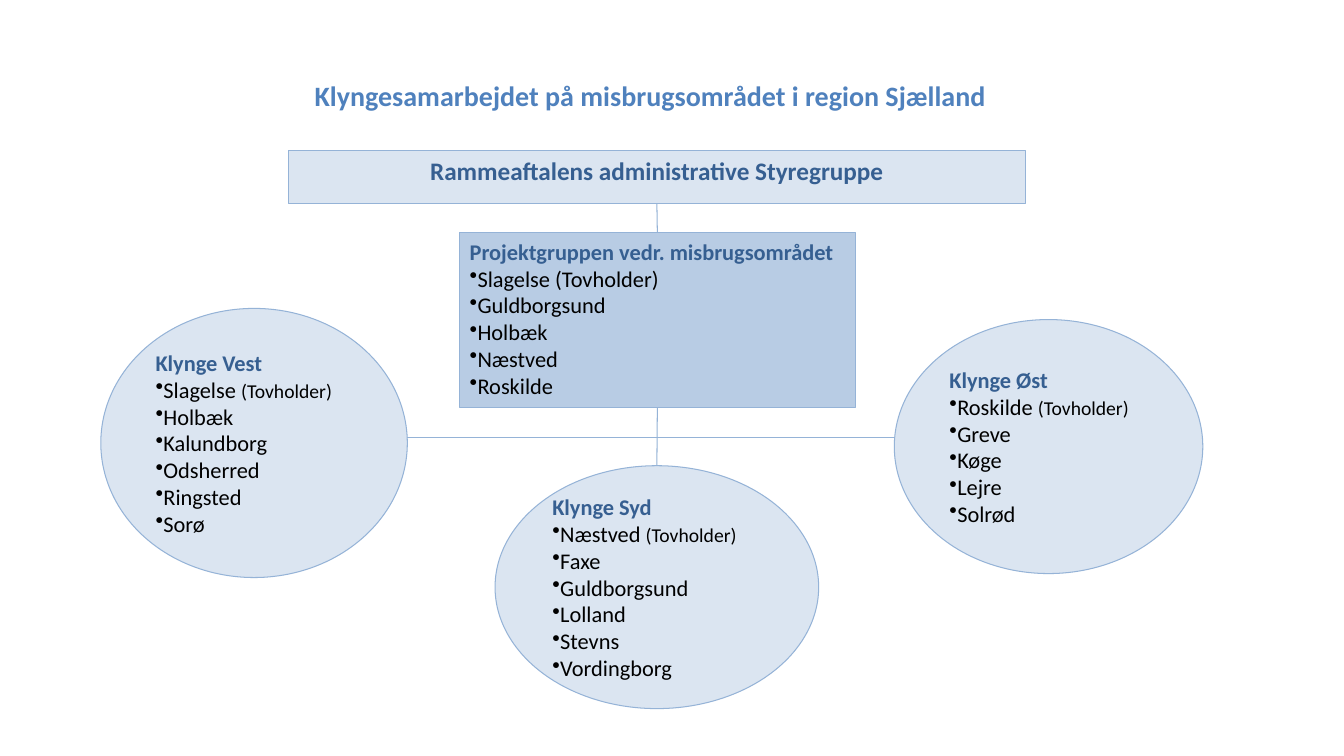
import pptx
import pptx.util
import pptx.dml.color
import pptx.enum.shapes
import pptx.enum.text
import pptx.oxml.ns
from lxml import etree

Inches = pptx.util.Inches
Pt = pptx.util.Pt
RGBColor = pptx.dml.color.RGBColor
SHAPE = pptx.enum.shapes.MSO_SHAPE
ANCHOR = pptx.enum.text.MSO_ANCHOR
ALIGN = pptx.enum.text.PP_ALIGN
qn = pptx.oxml.ns.qn

FONT = "Calibri"
TITLE_BLUE = RGBColor(0x4F, 0x81, 0xBD)
HEADING_BLUE = RGBColor(0x36, 0x5F, 0x91)
PALE_BLUE = RGBColor(0xDB, 0xE5, 0xF1)
MID_BLUE = RGBColor(0xB8, 0xCC, 0xE4)
LINE_BLUE = RGBColor(0x95, 0xB3, 0xD7)
BLACK = RGBColor(0, 0, 0)

CLUSTERS = {
    "Vest": ((1, 3.06, 3.04, 2.67),
             ["Slagelse", "Holbæk", "Kalundborg", "Odsherred", "Ringsted", "Sorø"]),
    "Syd": ((4.91, 4.62, 3.21, 2.41),
            ["Næstved", "Faxe", "Guldborgsund", "Lolland", "Stevns", "Vordingborg"]),
    "Øst": ((8.87, 3.17, 3.06, 2.52),
            ["Roskilde", "Greve", "Køge", "Lejre", "Solrød"]),
}


def format_paragraph(paragraph, size, color, bold=False, align=ALIGN.LEFT):
    paragraph.alignment = align
    paragraph.font.name = FONT
    paragraph.font.size = Pt(size)
    paragraph.font.bold = bold
    paragraph.font.color.rgb = color


def add_title(slide, text):
    title = slide.shapes.title
    title.left, title.top = Inches(3.02), Inches(0.72)
    title.width, title.height = Inches(7.71), Inches(0.46)
    title.text_frame.text = text
    title.text_frame.vertical_anchor = ANCHOR.MIDDLE
    format_paragraph(title.text_frame.paragraphs[0], 20, TITLE_BLUE, bold=True)


def add_box(slide, kind, place, fill, line_width, anchor, heading, size, align=ALIGN.LEFT):
    """Add an outlined shape whose first paragraph is a bold heading."""
    shape = slide.shapes.add_shape(kind, *map(Inches, place))
    shape.shadow.inherit = False
    shape.fill.solid()
    shape.fill.fore_color.rgb = fill
    shape.line.color.rgb = LINE_BLUE
    shape.line.width = Pt(line_width)
    frame = shape.text_frame
    frame.vertical_anchor = anchor
    frame.text = heading
    format_paragraph(frame.paragraphs[0], size, HEADING_BLUE, True, align)
    return shape


def add_bullet(frame, text, note=""):
    """Add a bulleted line, with an optional smaller note after the text."""
    paragraph = frame.add_paragraph()
    paragraph.add_run().text = text
    format_paragraph(paragraph, 16, BLACK)
    bullet = etree.Element(qn("a:buChar"), char="•")
    paragraph.font._element.addprevious(bullet)
    if note:
        run = paragraph.add_run()
        run.text = note
        run.font.size = Pt(14)


def add_cluster(slide, name, place, towns):
    ellipse = add_box(slide, SHAPE.OVAL, place, PALE_BLUE, 0.75, ANCHOR.MIDDLE,
                      f"Klynge {name}", 16)
    leader, *members = towns
    add_bullet(ellipse.text_frame, f"{leader} ", "(Tovholder)")
    for member in members:
        add_bullet(ellipse.text_frame, member)
    return ellipse


def add_line(slide, start=(0, 0), end=(0, 0)):
    line = slide.shapes.add_connector(
        pptx.enum.shapes.MSO_CONNECTOR.STRAIGHT, *map(Inches, start + end))
    line.line.color.rgb = LINE_BLUE
    line.line.width = Pt(0.75)
    etree.SubElement(line._element.spPr, qn("a:effectLst"))
    return line


def join_down(slide, upper, lower):
    line = add_line(slide)
    line.begin_connect(upper, 2)
    line.end_connect(lower, 0)


def main():
    presentation = pptx.Presentation()
    presentation.slide_width = Inches(13.33)
    presentation.slide_height = Inches(7.5)
    slide = presentation.slides.add_slide(presentation.slide_layouts[5])

    add_title(slide, "Klyngesamarbejdet på misbrugsområdet i region Sjælland")
    steering_group = add_box(slide, SHAPE.RECTANGLE, (2.86, 1.49, 7.31, 0.53), PALE_BLUE, 0.5,
                             ANCHOR.TOP, "Rammeaftalens administrative Styregruppe", 18,
                             ALIGN.CENTER)
    project_group = add_box(slide, SHAPE.RECTANGLE, (4.56, 2.31, 3.92, 1.73), MID_BLUE, 0.5,
                            ANCHOR.TOP, "Projektgruppen vedr. misbrugsområdet", 16)
    for town in ["Slagelse (Tovholder)", "Guldborgsund", "Holbæk", "Næstved", "Roskilde"]:
        add_bullet(project_group.text_frame, town)

    clusters = {name: add_cluster(slide, name, place, towns)
                for name, (place, towns) in CLUSTERS.items()}

    join_down(slide, steering_group, project_group)
    join_down(slide, project_group, clusters["Syd"])
    add_line(slide, (8.87, 4.34), (4.04, 4.34))

    presentation.save("out.pptx")


if __name__ == "__main__":
    main()
